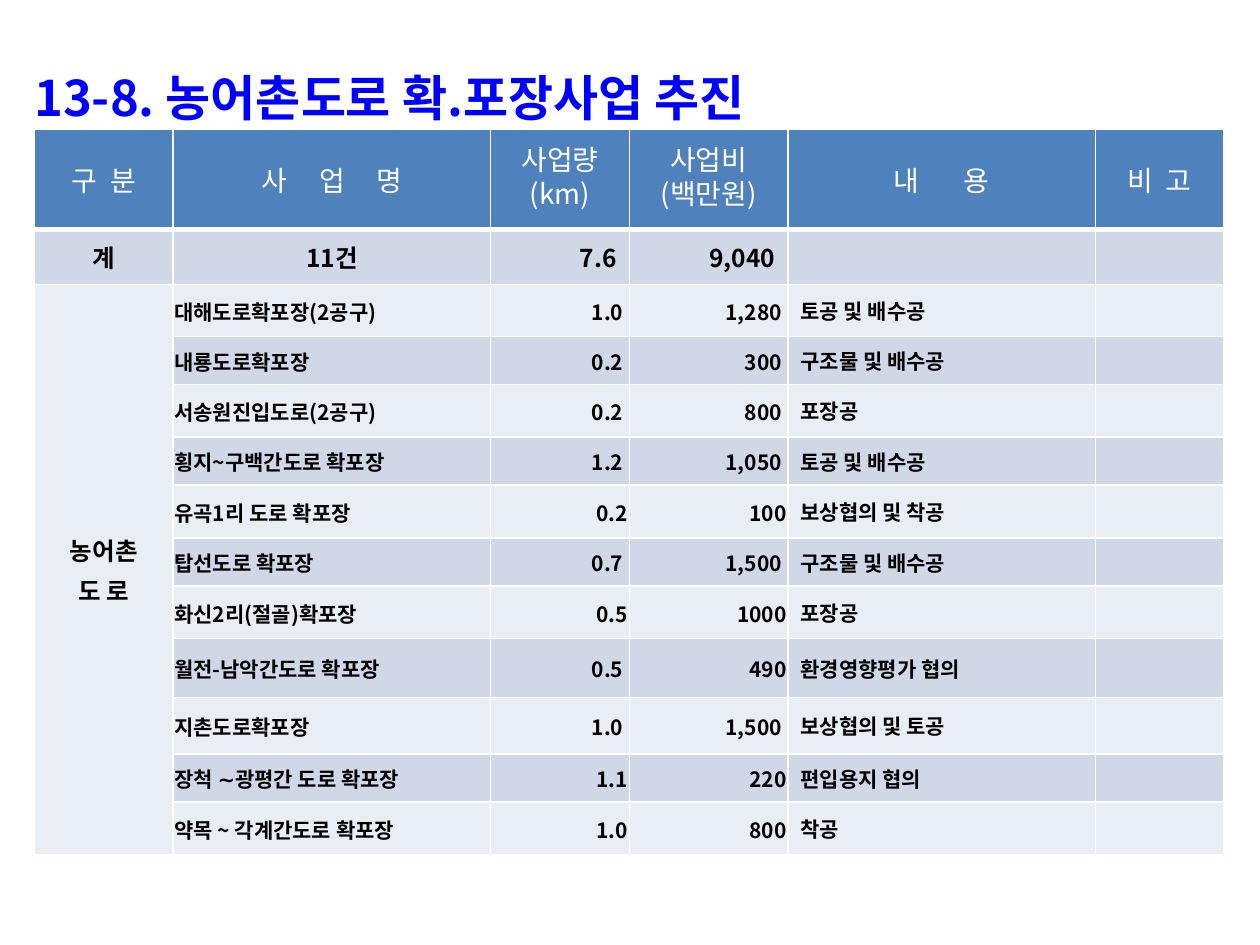
from lxml import etree
from pptx import Presentation
from pptx.dml.color import RGBColor
from pptx.enum.text import MSO_ANCHOR, MSO_AUTO_SIZE, PP_ALIGN
from pptx.oxml.ns import qn
from pptx.util import Pt

LEFT, CENTER, RIGHT = PP_ALIGN.LEFT, PP_ALIGN.CENTER, PP_ALIGN.RIGHT
TOP, MIDDLE = MSO_ANCHOR.TOP, MSO_ANCHOR.MIDDLE
NO_AUTOFIT = MSO_AUTO_SIZE.NONE

FONT = "Noto Sans CJK KR"
WHITE, BLACK, BLUE = "FFFFFF", "000000", "0000FF"
HEADER_FILL, BAND_FILLS = "4F81BD", ("D0D8E8", "E9EDF4")
WIDE_INSETS, TIGHT_INSETS, NO_INSETS = (7.2, 3.6, 7.2, 3.6), (0.7, 0.7, 0.7, 0), (0, 0, 0, 0)

COLUMN_WIDTHS = (79.2, 181.5, 79.2, 90.7, 175.7, 73.4)
ROW_HEIGHTS = (57.2, 31.6, 29.7, 27.4, 30.2, 27.4, 30.2, 27.4, 30.2, 33.5, 32.5, 27.4, 30.2)
HEADERS = (("구 분", 3.6), ("사 업 명", 14.4), ("사업량\n(km)", 0),
           ("사업비\n(백만원)", 0), ("내 용", 21.6), ("비 고", 3.6))
TOTALS = (("계", CENTER), ("11건", CENTER), ("7.6", RIGHT), ("9,040", RIGHT), ("", LEFT), ("", LEFT))
PROJECTS = (
    ("대해도로확포장(2공구)", "1.0 ", "1,280 ", "토공 및 배수공"),
    ("내룡도로확포장", "0.2 ", "300 ", "구조물 및 배수공"),
    ("서송원진입도로(2공구)", "0.2 ", "800 ", "포장공"),
    ("횡지~구백간도로 확포장", "1.2 ", "1,050 ", "토공 및 배수공"),
    ("유곡1리 도로 확포장", "0.2", "100", "보상협의 및 착공"),
    ("탑선도로 확포장", "0.7 ", "1,500 ", "구조물 및 배수공"),
    ("화신2리(절골)확포장", "0.5", "1000", "포장공"),
    ("월전-남악간도로 확포장", "0.5 ", "490", "환경영향평가 협의"),
    ("지촌도로확포장", "1.0 ", "1,500 ", "보상협의 및 토공"),
    ("장척 ∼광평간 도로 확포장", "1.1", "220", "편입용지 협의"),
    ("약목 ~ 각계간도로 확포장", "1.0", "800", "착공"),
)


def rgb(code):
    """Turn a hex string into a colour."""
    return RGBColor.from_string(code)


def add_span(para, text, size, color, bold=False, spacing=0):
    """Add one formatted run to a paragraph."""
    span = para.add_run()
    span.text = text
    span.font.size, span.font.bold, span.font.name = Pt(size), bold, FONT
    span.font.color.rgb = rgb(color)
    properties = span._r.get_or_add_rPr()
    etree.SubElement(properties, qn("a:ea"), typeface=FONT)
    if spacing:
        properties.set("spc", str(round(spacing * 100)))


def set_borders(cell, bottom=1):
    """Draw white lines around a cell."""
    properties = cell._tc.get_or_add_tcPr()
    for side, width in (("L", 1), ("R", 1), ("T", 1), ("B", bottom)):
        line = etree.SubElement(properties, qn(f"a:ln{side}"), w=str(Pt(width)))
        fill = etree.SubElement(line, qn("a:solidFill"))
        etree.SubElement(fill, qn("a:srgbClr"), val=WHITE)


def fill_cell(cell, text, size, align, insets=WIDE_INSETS, color=BLACK, bold=True,
              line_spacing=1.0, gap=0):
    """Write a cell's lines, widening the spaces between letters by the gap."""
    cell.vertical_anchor = MIDDLE
    left, top, right, bottom = insets if text else NO_INSETS
    cell.margin_left, cell.margin_top = Pt(left), Pt(top)
    cell.margin_right, cell.margin_bottom = Pt(right), Pt(bottom)
    if not text:
        return
    for index, line in enumerate(text.split("\n")):
        para = cell.text_frame.add_paragraph() if index else cell.text_frame.paragraphs[0]
        para.alignment = align
        para.line_spacing = line_spacing
        if index:
            para.space_before = Pt(size * 0.2)
        for part in (line if gap else [line]):
            add_span(para, part, size, color, bold, gap if part == " " else 0)


def add_title(page, left, top, width, height):
    """Place the slide title in its placeholder."""
    title = page.shapes.title
    title.left, title.top, title.width, title.height = Pt(left), Pt(top), Pt(width), Pt(height)
    frame = title.text_frame
    frame.word_wrap, frame.auto_size, frame.vertical_anchor = True, NO_AUTOFIT, TOP
    para = frame.paragraphs[0]
    para.alignment, para.line_spacing = LEFT, 1.2
    properties = para._p.get_or_add_pPr()
    properties.set("marL", str(Pt(42)))
    properties.set("indent", str(Pt(-42)))
    add_span(para, "13-8. 농어촌도로 확.포장사업 추진", 28, BLUE, bold=True)


def add_project_table(page, left, top):
    """Build the table of road projects from its top left corner."""
    table = page.shapes.add_table(
        len(ROW_HEIGHTS), len(COLUMN_WIDTHS), Pt(left), Pt(top),
        Pt(sum(COLUMN_WIDTHS)), Pt(sum(ROW_HEIGHTS))).table
    for column, width in zip(table.columns, COLUMN_WIDTHS):
        column.width = Pt(width)
    for index, (row, height) in enumerate(zip(table.rows, ROW_HEIGHTS)):
        row.height = Pt(height)
        for column, cell in enumerate(row.cells):
            set_borders(cell, 1 if index else 3)
            band = 1 if column == 0 and index > 1 else (index + 1) % 2
            cell.fill.solid()
            cell.fill.fore_color.rgb = rgb(BAND_FILLS[band] if index else HEADER_FILL)
    if_two_lines = {True: 0.7, False: 1.0}
    for column, (text, gap) in enumerate(HEADERS):
        fill_cell(table.cell(0, column), text, 16, CENTER, color=WHITE, bold=False,
                  line_spacing=if_two_lines["\n" in text], gap=gap)
    for column, (text, align) in enumerate(TOTALS):
        fill_cell(table.cell(1, column), text, 14, align)
    group = table.cell(2, 0)
    group.merge(table.cell(len(ROW_HEIGHTS) - 1, 0))
    fill_cell(group, "농어촌\n도 로", 14, CENTER)
    for row, (name, volume, cost, work) in enumerate(PROJECTS, start=2):
        fill_cell(table.cell(row, 1), name, 12, LEFT, TIGHT_INSETS)
        fill_cell(table.cell(row, 2), volume, 12, RIGHT, TIGHT_INSETS)
        fill_cell(table.cell(row, 3), cost, 12, RIGHT, TIGHT_INSETS)
        fill_cell(table.cell(row, 4), work, 12, LEFT)
        fill_cell(table.cell(row, 5), "", 12, LEFT)


def main():
    """Build and save the deck."""
    deck = Presentation()
    deck.slide_width, deck.slide_height = Pt(720), Pt(540)
    page = deck.slides.add_slide(deck.slide_layouts[5])
    add_title(page, 12.4, 28, 702.6, 45)
    add_project_table(page, 19.7, 73.8)
    deck.save("out.pptx")


if __name__ == "__main__":
    main()
